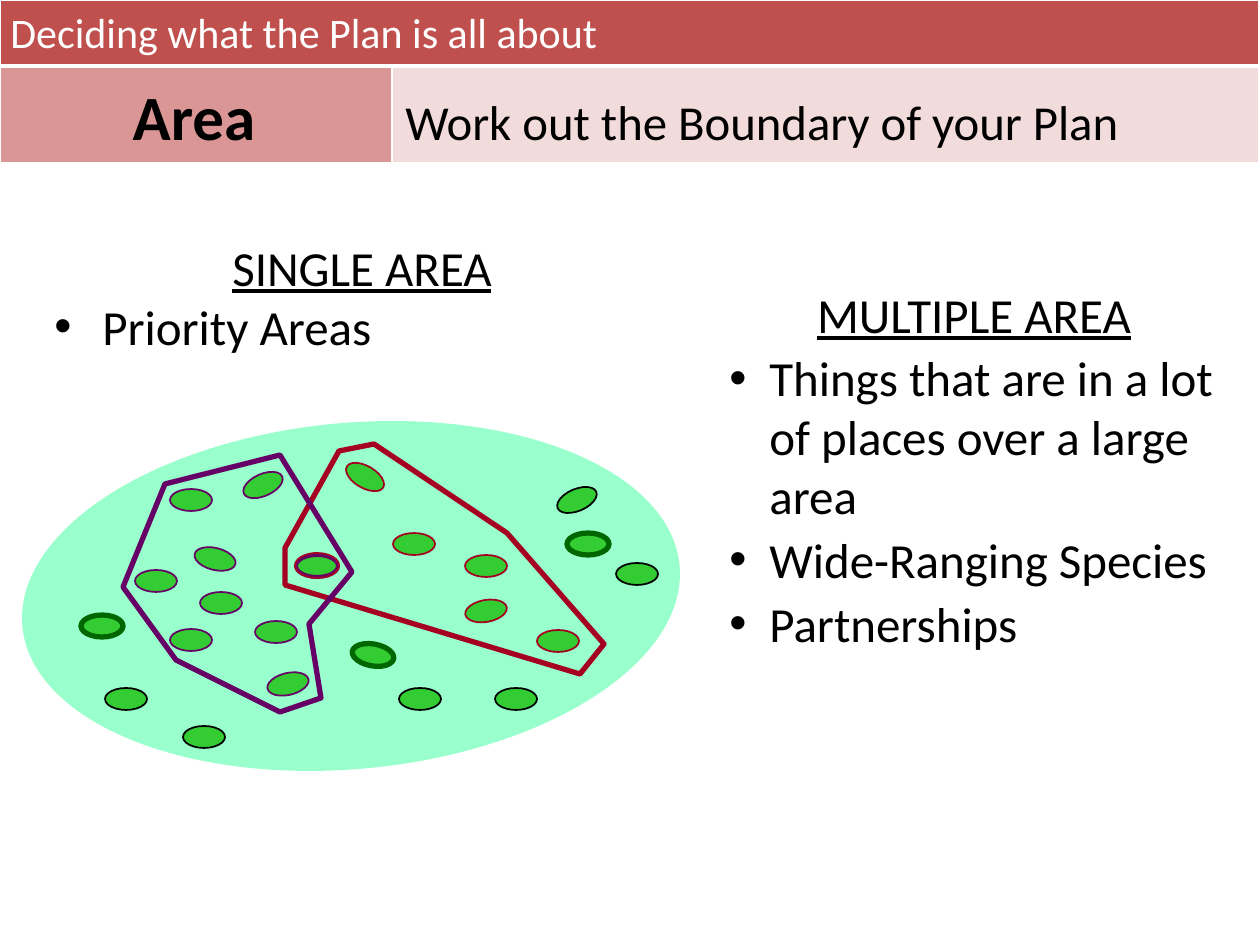
import pptx
import pptx.dml.color
import pptx.enum.shapes
import pptx.enum.text
import pptx.oxml
import pptx.oxml.ns
import pptx.util

RGB = pptx.dml.color.RGBColor
SHAPE = pptx.enum.shapes.MSO_SHAPE
ALIGN = pptx.enum.text.PP_ALIGN
ANCHOR = pptx.enum.text.MSO_ANCHOR

WHITE = RGB(0xFF, 0xFF, 0xFF)
BLACK = RGB(0, 0, 0)
BRICK = RGB(0xC0, 0x50, 0x4D)
ROSE = RGB(0xD9, 0x96, 0x94)
BLUSH = RGB(0xF2, 0xDC, 0xDB)
MINT = RGB(0x99, 0xFF, 0xCC)
GREEN = RGB(0x33, 0xCC, 0x33)
DARK_GREEN = RGB(0, 0x66, 0)
CRIMSON = RGB(0xA5, 0, 0x21)
PURPLE = RGB(0x66, 0, 0x66)

EMU_PER_PX = 914400 / 126
PATCH_SIZE = (42, 22)

OUTSIDE_PATCHES = [(399, 688, 0), (495, 688, 0), (616, 563, 0),
                   (556, 489, -23), (183, 726, 0), (105, 688, 0)]
BOLD_PATCHES = [(81, 615, 0), (352, 644, 10), (567, 533, 0)]
CRIMSON_PATCHES = [(344, 466, 30), (465, 600, -10), (393, 533, 0),
                   (465, 555, 0), (537, 630, 0)]
PURPLE_PATCHES = [(242, 474, -24), (255, 621, 0), (170, 489, 0),
                  (170, 629, 0), (267, 673, -13), (200, 592, 0),
                  (194, 548, 14), (135, 570, 0)]
SHARED_PATCH = [(296, 555, 0)]
CRIMSON_BOUNDARY = [(339, 451), (285, 548), (285, 585), (580, 674),
                    (604, 644), (507, 533), (374, 444)]
PURPLE_BOUNDARY = [(165, 484), (123, 587), (176, 660), (280, 712),
                   (321, 698), (309, 624), (352, 572), (280, 455)]


def emu(px):
    return pptx.util.Emu(round(px * EMU_PER_PX))


class PlanSlide:
    """Draws styled elements on one slide, with lengths in px."""

    font = "Calibri"

    def __init__(self, slide):
        self.shapes = slide.shapes

    def outline(self, shape, color, width):
        shape.shadow.inherit = False
        if color is None:
            shape.line.fill.background()
        else:
            shape.line.color.rgb = color
            shape.line.width = pptx.util.Pt(width)

    def shape(self, kind, box, fill, color=None, width=1, rotation=0):
        shape = self.shapes.add_shape(kind, *map(emu, box))
        shape.rotation = rotation
        if fill is None:
            shape.fill.background()
        else:
            shape.fill.solid()
            shape.fill.fore_color.rgb = fill
        self.outline(shape, color, width)

    def patches(self, places, color, width=1):
        for left, top, rotation in places:
            self.shape(SHAPE.OVAL, (left, top, *PATCH_SIZE), GREEN, color, width, rotation)

    def boundary(self, points, color):
        builder = self.shapes.build_freeform(*points[0], scale=EMU_PER_PX)
        builder.add_line_segments(points[1:], close=True)
        area = builder.convert_to_shape()
        area.fill.background()
        self.outline(area, color, 3)

    def text_frame(self, box, anchor):
        frame = self.shapes.add_textbox(*map(emu, box)).text_frame
        frame.word_wrap = True
        frame.vertical_anchor = anchor
        return frame

    def run(self, paragraph, words, size, color=BLACK, bold=False, underline=False):
        run = paragraph.add_run()
        run.text = words
        run.font.name = self.font
        run.font.size = pptx.util.Pt(size)
        run.font.color.rgb = color
        run.font.bold = bold
        run.font.underline = underline

    def heading(self, box, words, size, color=BLACK, bold=False, align=ALIGN.LEFT):
        paragraph = self.text_frame(box, ANCHOR.MIDDLE).paragraphs[0]
        paragraph.alignment = align
        self.run(paragraph, words, size, color, bold)

    def bullet_list(self, box, title, items, indent, gap):
        frame = self.text_frame(box, ANCHOR.TOP)
        frame.paragraphs[0].alignment = ALIGN.CENTER
        self.run(frame.paragraphs[0], title, 28, underline=True)
        for item in items:
            paragraph = frame.add_paragraph()
            properties = paragraph._p.get_or_add_pPr()
            properties.set("marL", str(emu(indent)))
            properties.set("indent", str(-emu(indent)))
            for tag, name, value in (("buFont", "typeface", "Arial"), ("buChar", "char", "•")):
                bullet = pptx.oxml.parse_xml(f'<a:{tag} {pptx.oxml.ns.nsdecls("a")} {name}="{value}"/>')
                properties.append(bullet)
            paragraph.space_before = pptx.util.Pt(gap)
            self.run(paragraph, item, 28)

    def cell(self, cell, fill, widths):
        properties = cell._tc.get_or_add_tcPr()
        for side, width in zip("LRTB", widths):
            properties.append(pptx.oxml.parse_xml(
                f'<a:ln{side} {pptx.oxml.ns.nsdecls("a")} w="{pptx.util.Pt(width)}">'
                f'<a:solidFill><a:srgbClr val="{WHITE}"/></a:solidFill></a:ln{side}>'))
        cell.fill.solid()
        cell.fill.fore_color.rgb = fill

    def banner(self, columns, rows):
        table = self.shapes.add_table(
            len(rows), len(columns), 0, 0, emu(sum(columns)), emu(sum(rows))).table
        for column, width in zip(table.columns, columns):
            column.width = emu(width)
        for row, height in zip(table.rows, rows):
            row.height = emu(height)
        table.cell(0, 0).merge(table.cell(0, 1))
        self.cell(table.cell(0, 0), BRICK, (1, 1, 1, 3))
        self.cell(table.cell(1, 0), ROSE, (1, 1, 1, 1))
        self.cell(table.cell(1, 1), BLUSH, (1, 1, 1, 1))


def main():
    deck = pptx.Presentation()
    deck.slide_width, deck.slide_height = emu(1260), emu(945)
    plan = PlanSlide(deck.slides.add_slide(deck.slide_layouts[6]))

    plan.banner((392, 867), (66, 97))
    plan.bullet_list((42, 231, 640, 561), "SINGLE AREA", ["Priority Areas"], 48, 0)

    plan.shape(SHAPE.FLOWCHART_SUMMING_JUNCTION, (21, 423, 660, 346), MINT, rotation=-5.3)
    plan.patches(OUTSIDE_PATCHES, BLACK)
    plan.patches(BOLD_PATCHES, DARK_GREEN, 3)
    plan.boundary(CRIMSON_BOUNDARY, CRIMSON)
    plan.patches(CRIMSON_PATCHES, CRIMSON)
    plan.patches(SHARED_PATCH, PURPLE, 2.25)
    plan.shape(SHAPE.OVAL, (295, 553, 44, 25), None, CRIMSON)
    plan.patches(PURPLE_PATCHES, PURPLE)
    plan.boundary(PURPLE_BOUNDARY, PURPLE)

    plan.bullet_list(
        (717, 278, 514, 441), "MULTIPLE AREA",
        ["Things that are in a lot of places over a large area",
         "Wide-Ranging Species", "Partnerships"], 40, 2.8)

    plan.heading((-2, 0, 1257, 64), "Deciding what the Plan is all about", 24, WHITE)
    plan.heading((0, 70, 388, 90), "Area", 36, bold=True, align=ALIGN.CENTER)
    plan.heading((393, 90, 867, 63), "Work out the Boundary of your Plan", 27.9)
    deck.save("out.pptx")


if __name__ == "__main__":
    main()
